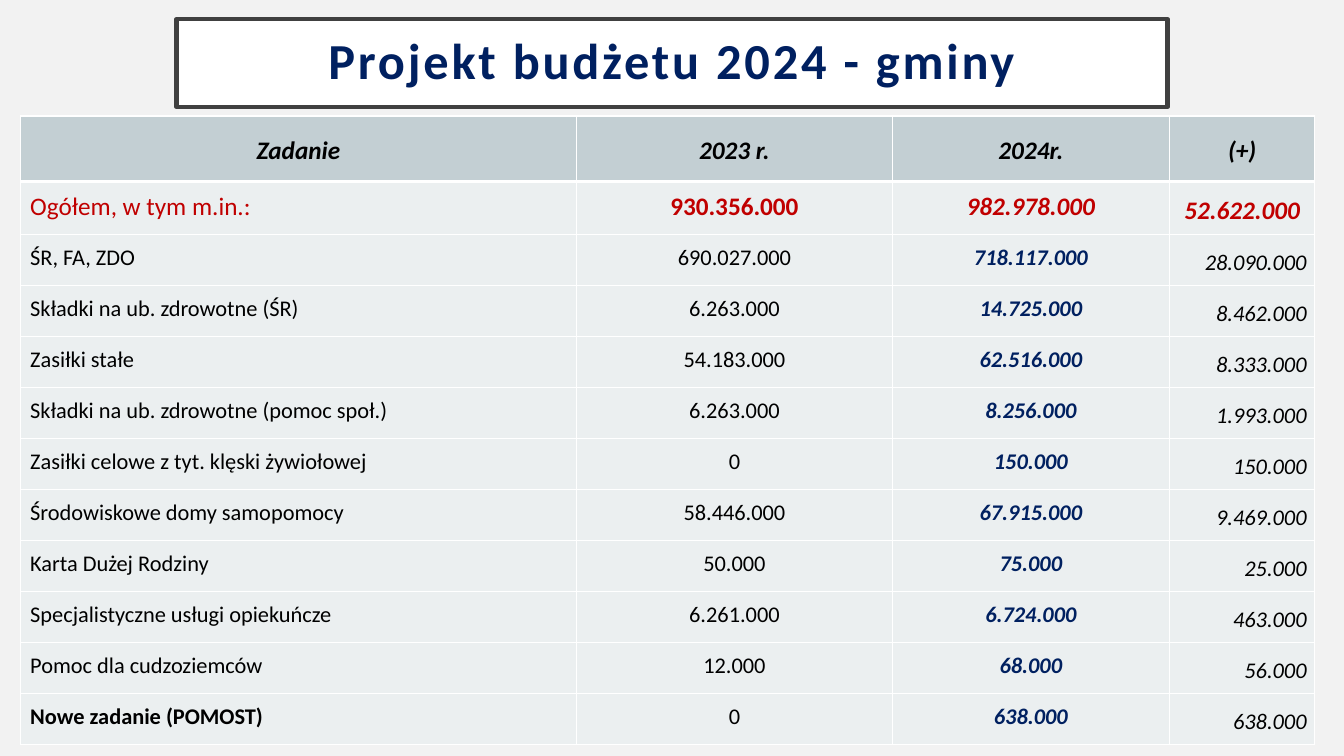
import pptx
import pptx.dml.color
import pptx.enum.text
import pptx.oxml
import pptx.oxml.ns
import pptx.util

Inches = pptx.util.Inches
Pt = pptx.util.Pt
ALIGN = pptx.enum.text.PP_ALIGN
ANCHOR = pptx.enum.text.MSO_ANCHOR

COLORS = {
    "background": "F2F2F2",
    "white": "FFFFFF",
    "frame": "404040",
    "navy": "002060",
    "red": "C00000",
    "black": "000000",
    "header": "C3CFD3",
    "body": "EBEFF0",
}
FONT = "Calibri"
COLUMN_WIDTHS = [5.52, 3.13, 2.75, 1.44]
TABLE_HEIGHT = 6.24
HEADER_HEIGHT = 0.65
TOTAL_HEIGHT = 0.53
BUDGET = [
    ["Zadanie", "2023 r.", "2024r.", "(+)"],
    ["Ogółem, w tym m.in.:", "930.356.000", "982.978.000", "52.622.000"],
    ["ŚR, FA, ZDO", "690.027.000", "718.117.000", "28.090.000"],
    ["Składki na ub. zdrowotne (ŚR)", "6.263.000", "14.725.000", "8.462.000"],
    ["Zasiłki stałe", "54.183.000", "62.516.000", "8.333.000"],
    ["Składki na ub. zdrowotne (pomoc społ.)", "6.263.000", "8.256.000", "1.993.000"],
    ["Zasiłki celowe z tyt. klęski żywiołowej", "0", "150.000", "150.000"],
    ["Środowiskowe domy samopomocy", "58.446.000", "67.915.000", "9.469.000"],
    ["Karta Dużej Rodziny", "50.000", "75.000", "25.000"],
    ["Specjalistyczne usługi opiekuńcze", "6.261.000", "6.724.000", "463.000"],
    ["Pomoc dla cudzoziemców", "12.000", "68.000", "56.000"],
    ["Nowe zadanie (POMOST)", "0", "638.000", "638.000"],
]


def rgb(name):
    return pptx.dml.color.RGBColor.from_string(COLORS[name])


def set_font(p, size, color, bold, italic=False):
    p.font.name = FONT
    p.font.size = Pt(size)
    p.font.bold = bold
    p.font.italic = italic
    p.font.color.rgb = rgb(color)


def add_title(s, text):
    sp = s.shapes.title
    sp.left, sp.top = Inches(1.75), Inches(0.19)
    sp.width, sp.height = Inches(9.83), Inches(0.87)
    sp.fill.solid()
    sp.fill.fore_color.rgb = rgb("white")
    sp.line.color.rgb = rgb("frame")
    sp.line.width = Pt(3)
    tf = sp.text_frame
    tf.word_wrap = True
    tf.auto_size = pptx.enum.text.MSO_AUTO_SIZE.NONE
    tf.vertical_anchor = ANCHOR.MIDDLE
    tf.margin_left = tf.margin_right = Inches(0.3)
    tf.margin_top = tf.margin_bottom = Inches(0.2)
    p = tf.paragraphs[0]
    p.alignment = ALIGN.CENTER
    p.line_spacing = 0.9
    r = p.add_run()
    r.text = text
    r._r.get_or_add_rPr().set("spc", "200")
    set_font(p, 36, "navy", True)


def set_borders(cell, top, bottom):
    tcPr = cell._tc.get_or_add_tcPr()
    for side, width in (("L", 1), ("R", 1), ("T", top), ("B", bottom)):
        tcPr.append(pptx.oxml.parse_xml(
            f'<a:ln{side} {pptx.oxml.ns.nsdecls("a")} w="{Pt(width)}">'
            f'<a:solidFill><a:srgbClr val="{COLORS["white"]}"/></a:solidFill>'
            f'</a:ln{side}>'))


def cell_font(row, col):
    if row == 0:
        return 18, "black", True, True
    if row == 1:
        return 18, "red", col > 0, col > 1
    last_task = row == len(BUDGET) - 1 and col == 0
    return 16, "navy" if col == 2 else "black", col == 2 or last_task, col > 1


def fill_cell(cell, text, row, col):
    set_borders(cell, 3 if row == 1 else 1, 3 if row == 0 else 1)
    cell.fill.solid()
    cell.fill.fore_color.rgb = rgb("body" if row else "header")
    difference = row > 0 and col == 3
    cell.vertical_anchor = ANCHOR.MIDDLE if row == 0 or difference else ANCHOR.TOP
    p = cell.text_frame.paragraphs[0]
    p.alignment = ALIGN.LEFT if row and col == 0 else ALIGN.CENTER
    if difference:
        cell.margin_left = cell.margin_right = cell.margin_top = Inches(0.01)
        cell.margin_bottom = 0
        if row > 1:
            p.alignment = ALIGN.RIGHT
            cell.margin_right = Inches(0.08)
    p.line_spacing = 1.15
    p.space_after = Pt(8)
    p.add_run().text = text
    set_font(p, *cell_font(row, col))


def add_budget_table(s):
    table = s.shapes.add_table(
        len(BUDGET), len(COLUMN_WIDTHS), Inches(0.2), Inches(1.15),
        Inches(sum(COLUMN_WIDTHS)), Inches(TABLE_HEIGHT)).table
    table.first_row = table.horz_banding = False
    for column, width in zip(table.columns, COLUMN_WIDTHS):
        column.width = Inches(width)
    task_count = len(BUDGET) - 2
    task_height = (TABLE_HEIGHT - HEADER_HEIGHT - TOTAL_HEIGHT) / task_count
    heights = [HEADER_HEIGHT, TOTAL_HEIGHT] + [task_height] * task_count
    for row, (values, height) in enumerate(zip(BUDGET, heights)):
        table.rows[row].height = Inches(height)
        for col, text in enumerate(values):
            fill_cell(table.cell(row, col), text, row, col)


def main():
    prs = pptx.Presentation()
    prs.slide_width, prs.slide_height = Inches(13.33), Inches(7.5)
    s = prs.slides.add_slide(prs.slide_layouts[5])
    s.background.fill.solid()
    s.background.fill.fore_color.rgb = rgb("background")
    add_title(s, "Projekt budżetu 2024 - gminy")
    add_budget_table(s)
    prs.save("out.pptx")


if __name__ == "__main__":
    main()
